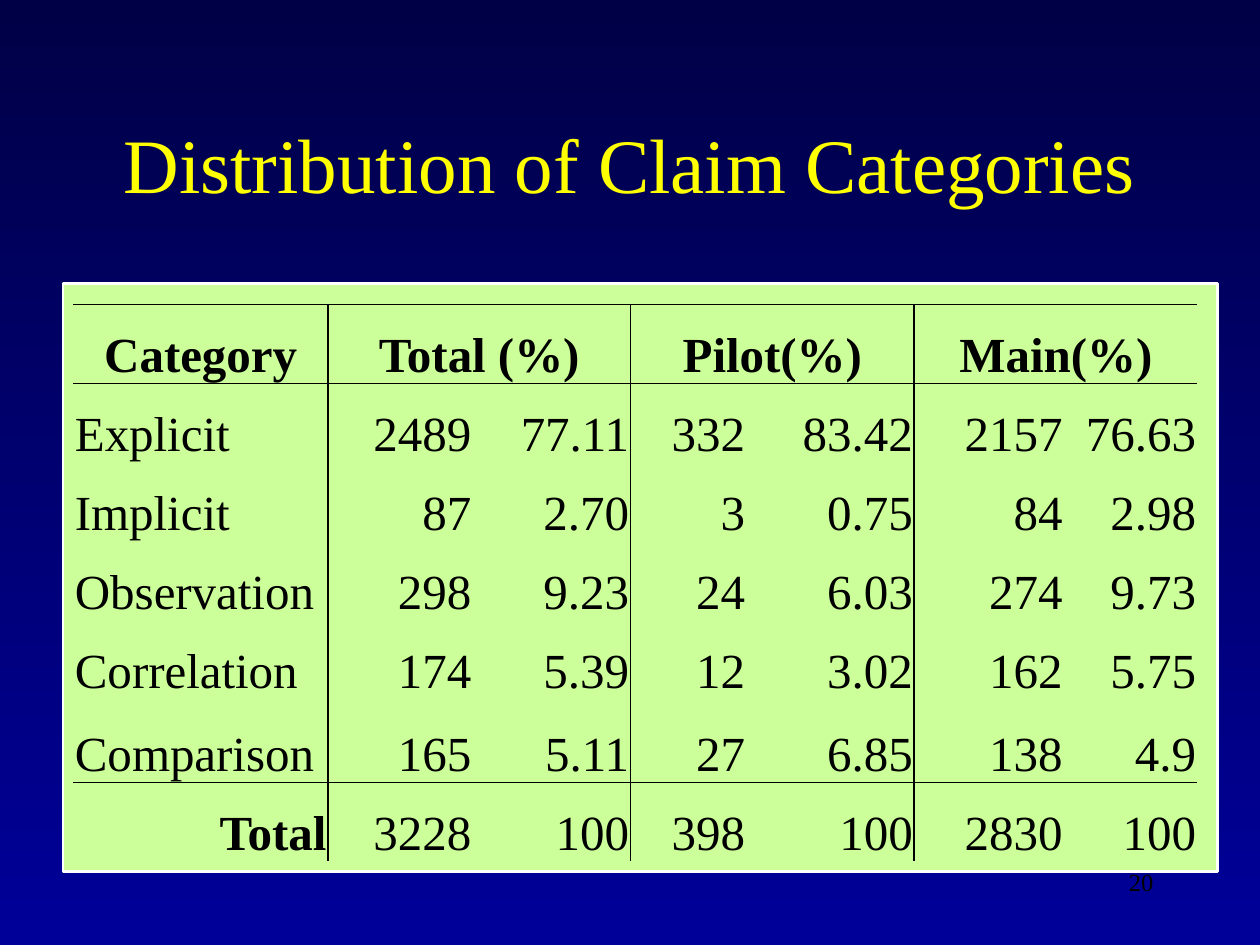
from lxml import etree
from pptx import Presentation
from pptx.dml.color import RGBColor
from pptx.enum.shapes import MSO_SHAPE
from pptx.enum.text import MSO_ANCHOR, PP_ALIGN
from pptx.oxml.ns import qn
from pptx.util import Cm, Pt

LEFT, CENTER, RIGHT = PP_ALIGN.LEFT, PP_ALIGN.CENTER, PP_ALIGN.RIGHT
TOP, MIDDLE, BOTTOM = MSO_ANCHOR.TOP, MSO_ANCHOR.MIDDLE, MSO_ANCHOR.BOTTOM
RECTANGLE = MSO_SHAPE.RECTANGLE

TITLE = "Distribution of Claim Categories"
PAGE_NUMBER = "20"
HEADERS = {0: "Category", 1: "Total (%)", 3: "Pilot(%)", 5: "Main(%)"}
ROWS = [
    ("Explicit", "2489", "77.11", "332", "83.42", "2157", "76.63"),
    ("Implicit", "87", "2.70", "3", "0.75", "84", "2.98"),
    ("Observation", "298", "9.23", "24", "6.03", "274", "9.73"),
    ("Correlation", "174", "5.39", "12", "3.02", "162", "5.75"),
    ("Comparison", "165", "5.11", "27", "6.85", "138", "4.9"),
    ("Total", "3228", "100", "398", "100", "2830", "100"),
]

COLORS = {
    "sky_top": "000047",
    "sky_bottom": "000099",
    "panel": "CCFF99",
    "panel_line": "FFFFFF",
    "title": "FFFF00",
    "ink": "000000",
}
FONT = "Times New Roman"
COLUMN_WIDTHS = [5.13, 2.92, 3.18, 2.34, 3.38, 3.02, 2.69]
ROW_HEIGHTS = [1.59, 1.59, 1.59, 1.59, 1.59, 1.68, 1.59]
CELL_FORMAT = {
    "vertical_anchor": BOTTOM,
    "margin_left": Cm(0.03),
    "margin_right": Cm(0.03),
    "margin_top": Cm(0.03),
    "margin_bottom": 0,
}
# Line widths in points, by the row or column that a rule stands before
HORIZONTAL_RULES = {0: 0.5, 1: 0.5, 6: 1}
VERTICAL_RULES = {1: 1, 3: 1, 5: 1}


def color(name):
    return RGBColor.from_string(COLORS[name])


def set_format(target, values):
    for name, value in values.items():
        setattr(target, name, value)


def write(frame, text, align, size, ink="ink", bold=False):
    para = frame.paragraphs[0]
    para.alignment = align
    span = para.add_run()
    span.text = text
    set_format(span.font, {"name": FONT, "size": Pt(size), "bold": bold})
    span.font.color.rgb = color(ink)


def add_text(page, place, text, align, size, anchor, ink="ink"):
    box = page.shapes.add_textbox(*map(Cm, place))
    set_format(box.text_frame, {"word_wrap": True, "vertical_anchor": anchor})
    write(box.text_frame, text, align, size, ink)


def add_border(cell, side, width):
    """Draw one cell edge, or clear it when there is no width."""
    line = etree.SubElement(cell._tc.get_or_add_tcPr(), qn(f"a:ln{side}"))
    if not width:
        etree.SubElement(line, qn("a:noFill"))
        return
    line.set("w", str(Pt(width)))
    fill = etree.SubElement(line, qn("a:solidFill"))
    etree.SubElement(fill, qn("a:srgbClr"), val=COLORS["ink"])


def style_cell(cell, row, column, width):
    set_format(cell, CELL_FORMAT)
    add_border(cell, "L", VERTICAL_RULES.get(column))
    add_border(cell, "R", VERTICAL_RULES.get(column + width))
    add_border(cell, "T", HORIZONTAL_RULES.get(row))
    add_border(cell, "B", HORIZONTAL_RULES.get(row + 1))
    cell.fill.background()


def add_claim_table(page):
    frame = page.shapes.add_table(
        len(ROW_HEIGHTS), len(COLUMN_WIDTHS), Cm(1.48), Cm(6.14),
        Cm(sum(COLUMN_WIDTHS)), Cm(sum(ROW_HEIGHTS)))
    table = frame.table
    set_format(table, {"first_row": False, "horz_banding": False})
    for column, width in zip(table.columns, COLUMN_WIDTHS):
        column.width = Cm(width)
    for row, height in zip(table.rows, ROW_HEIGHTS):
        row.height = Cm(height)

    for column, text in HEADERS.items():
        cell = table.cell(0, column)
        if column:
            cell.merge(table.cell(0, column + 1))
        style_cell(cell, 0, column, cell.span_width if column else 1)
        write(cell.text_frame, text, CENTER, 28, bold=True)

    for row, values in enumerate(ROWS, 1):
        for column, text in enumerate(values):
            cell = table.cell(row, column)
            style_cell(cell, row, column, 1)
            is_total = text == "Total"
            align = RIGHT if column or is_total else LEFT
            write(cell.text_frame, text, align, 28, bold=is_total)


def main():
    deck = Presentation()
    set_format(deck, {"slide_width": Cm(25.4), "slide_height": Cm(19.05)})
    page = deck.slides.add_slide(deck.slide_layouts[6])

    sky = page.background.fill
    sky.gradient()
    sky.gradient_angle = 270
    for stop, position, name in zip(
            sky.gradient_stops, (0, 1), ("sky_top", "sky_bottom")):
        stop.position = position
        stop.color.rgb = color(name)

    panel = page.shapes.add_shape(
        RECTANGLE, Cm(1.27), Cm(5.72), Cm(23.28), Cm(11.85))
    panel.shadow.inherit = False
    panel.fill.solid()
    panel.fill.fore_color.rgb = color("panel")
    panel.line.color.rgb = color("panel_line")
    panel.line.width = Pt(1.5)

    add_text(page, (1.9, 1.7, 21.6, 3.18), TITLE, CENTER, 44, MIDDLE, "title")
    add_text(page, (18.2, 17.36, 5.3, 1.27), PAGE_NUMBER, RIGHT, 14, TOP)
    add_claim_table(page)
    deck.save("out.pptx")


if __name__ == "__main__":
    main()
